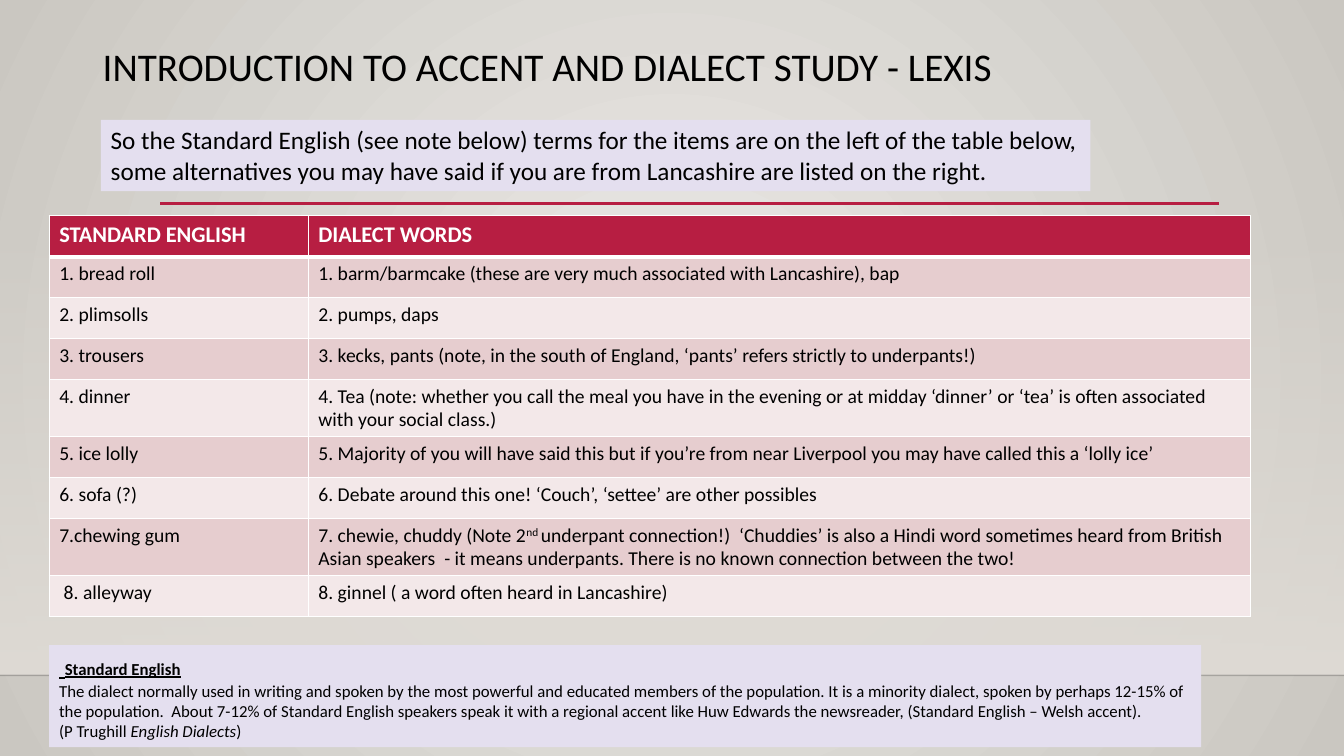
from dataclasses import dataclass

from lxml.etree import SubElement
from pptx import Presentation
from pptx.dml.color import RGBColor
from pptx.enum.shapes import MSO_CONNECTOR, MSO_SHAPE
from pptx.enum.text import MSO_ANCHOR, PP_ALIGN
from pptx.oxml import parse_xml
from pptx.oxml.ns import nsdecls, qn
from pptx.util import Cm, Pt


@dataclass(frozen=True)
class Theme:
    font: str = "Calibri"
    ink: str = "000000"
    white: str = "FFFFFF"
    accent: str = "B71E42"
    panel: str = "E4DFEF"
    bands: tuple = ("E6CDCF", "F3E8E9")
    glow: tuple = ("ECEAE7", "CAC7C1")
    floor: str = "DFDBD5"
    title: int = 28
    lead: int = 18
    header: int = 16
    body: int = 14
    note: int = 12


THEME = Theme()

TITLE = "INTRODUCTION TO ACCENT AND DIALECT STUDY - LEXIS"
INTRO = ("So the Standard English (see note below) terms for the items are on the left of the "
         "table below, some alternatives you may have said if you are from Lancashire are "
         "listed on the right.")
HEADINGS = ("STANDARD ENGLISH", "DIALECT WORDS")
WORDS = [
    ("1. bread roll", "1. barm/barmcake (these are very much associated with Lancashire), bap"),
    ("2. plimsolls", "2. pumps, daps"),
    ("3. trousers", "3. kecks, pants (note, in the south of England, ‘pants’ refers strictly to "
                    "underpants!)"),
    ("4. dinner", "4. Tea (note: whether you call the meal you have in the evening or at midday "
                  "‘dinner’ or ‘tea’ is often associated with your social class.)"),
    ("5. ice lolly", "5. Majority of you will have said this but if you’re from near Liverpool "
                     "you may have called this a ‘lolly ice’"),
    ("6. sofa (?)", "6. Debate around this one! ‘Couch’, ‘settee’ are other possibles"),
    ("7.chewing gum", [
        ("7. chewie, chuddy (Note 2", {}),
        ("nd ", {"baseline": 30000}),
        ("underpant connection!)  ‘Chuddies’ is also a Hindi word sometimes heard from British "
         "Asian speakers  - it means underpants. There is no known connection between the "
         "two!", {})]),
    (" 8. alleyway", "8. ginnel ( a word often heard in Lancashire)"),
]
HEADING_STYLE = {"bold": True, "underline": True}
NOTE = [
    [(" ", {**HEADING_STYLE, "size": Pt(THEME.lead)}), ("Standard English", HEADING_STYLE)],
    "The dialect normally used in writing and spoken by the most powerful and educated members "
    "of the population. It is a minority dialect, spoken by perhaps 12-15% of the population.  "
    "About 7-12% of Standard English speakers speak it with a regional accent like Huw Edwards "
    "the newsreader, (Standard English – Welsh accent).",
    [("(P Trughill ", {}), ("English Dialects", {"italic": True}), (")", {})],
]


def paint(target, color):
    target.solid()
    target.fore_color.rgb = RGBColor.from_string(color)


def gradient(stops, direction):
    """Build a gradient fill from (position, colour, opacity) stops, all in percent."""
    marks = "".join(
        f'<a:gs pos="{position * 1000}"><a:srgbClr val="{color}">'
        f'<a:alpha val="{opacity * 1000}"/></a:srgbClr></a:gs>'
        for position, color, opacity in stops)
    return parse_xml(f'<a:gradFill {nsdecls("a")} rotWithShape="1"><a:gsLst>{marks}</a:gsLst>'
                     f'{direction}</a:gradFill>')


class SlideBuilder:
    def __init__(self, page, theme):
        self.page = page
        self.theme = theme

    def background(self):
        self.page.background.fill.gradient()
        fill = self.page.element.find(".//" + qn("a:gradFill"))
        inner, outer = self.theme.glow
        fill.getparent().replace(fill, gradient(
            [(0, inner, 100), (100, outer, 100)],
            '<a:path path="circle"><a:fillToRect l="50000" t="50000" r="50000" b="50000"/>'
            '</a:path>'))

    def panel(self, left, top, width, height, color):
        box = self.page.shapes.add_shape(
            MSO_SHAPE.RECTANGLE, Cm(left), Cm(top), Cm(width), Cm(height))
        box.shadow.inherit = False
        box.line.fill.background()
        paint(box.fill, color)
        return box

    def fade(self, left, top, width, height, color):
        box = self.panel(left, top, width, height, color)
        solid = box.element.spPr.find(qn("a:solidFill"))
        solid.getparent().replace(solid, gradient(
            [(0, color, 0), (100, color, 100)], '<a:lin ang="5400000" scaled="0"/>'))

    def rule(self, left, right, top, color, weight, opacity=100):
        line = self.page.shapes.add_connector(
            MSO_CONNECTOR.STRAIGHT, Cm(left), Cm(top), Cm(right), Cm(top))
        line.line.width = Pt(weight)
        paint(line.line.fill, color)
        properties = line.element.spPr
        shade = properties.find(".//" + qn("a:srgbClr"))
        SubElement(shade, qn("a:alpha"), val=str(opacity * 1000))
        SubElement(properties, qn("a:effectLst"))

    def put_text(self, frame, paragraphs, size, color=None, **style):
        """Fill a frame; each paragraph is a string or a list of (text, format) spans."""
        frame.word_wrap = True
        for index, spans in enumerate(paragraphs):
            para = frame.add_paragraph() if index else frame.paragraphs[0]
            para.alignment = PP_ALIGN.LEFT
            for text, extra in [(spans, {})] if isinstance(spans, str) else spans:
                span = para.add_run()
                span.text = text
                values = {"name": self.theme.font, "size": Pt(size), **style, **extra}
                baseline = values.pop("baseline", None)
                for name, value in values.items():
                    setattr(span.font, name, value)
                span.font.color.rgb = RGBColor.from_string(color or self.theme.ink)
                if baseline:
                    span.font._element.set("baseline", str(baseline))

    def title(self, text, left, top, width, height):
        box = self.page.shapes.add_textbox(Cm(left), Cm(top), Cm(width), Cm(height))
        box.text_frame.vertical_anchor = MSO_ANCHOR.MIDDLE
        self.put_text(box.text_frame, [text], self.theme.title)
        box.text_frame.paragraphs[0].line_spacing = 0.9

    def text_panel(self, paragraphs, size, left, top, width, height):
        box = self.panel(left, top, width, height, self.theme.panel)
        box.text_frame.vertical_anchor = MSO_ANCHOR.TOP
        self.put_text(box.text_frame, paragraphs, size)

    def borders(self, cell, **weights):
        properties = cell._tc.get_or_add_tcPr()
        for side in "LRTB":
            line = SubElement(properties, qn(f"a:ln{side}"), w=str(Pt(weights.get(side, 1))))
            fill = SubElement(line, qn("a:solidFill"))
            SubElement(fill, qn("a:srgbClr"), val=self.theme.white)

    def table(self, headings, rows, left, top, widths, row_height):
        theme = self.theme
        table = self.page.shapes.add_table(
            len(rows) + 1, len(widths), Cm(left), Cm(top), Cm(sum(widths)),
            Cm(row_height * (len(rows) + 1))).table
        for column, width in zip(table.columns, widths):
            column.width = Cm(width)
        for index, texts in enumerate([headings, *rows]):
            table.rows[index].height = Cm(row_height)
            for cell, text in zip(table.rows[index].cells, texts):
                self.borders(cell, B=1 if index else 3, T=3 if index == 1 else 1)
                if index:
                    paint(cell.fill, theme.bands[(index - 1) % 2])
                    self.put_text(cell.text_frame, [text], theme.body, bold=False)
                else:
                    paint(cell.fill, theme.accent)
                    self.put_text(cell.text_frame, [text], theme.header, theme.white, bold=True)


def main():
    deck = Presentation()
    deck.slide_width, deck.slide_height = Cm(33.87), Cm(19.05)
    slide = SlideBuilder(deck.slides.add_slide(deck.slide_layouts[6]), THEME)
    slide.background()
    slide.fade(0, 5.61, 33.87, 11.4, THEME.floor)
    slide.rule(0, 33.87, 17.02, THEME.ink, 1, opacity=20)
    slide.rule(4.04, 30.73, 5.13, THEME.accent, 2.5)
    slide.title(TITLE, 2.34, 1.02, 29.21, 1.42)
    slide.text_panel([INTRO], THEME.lead, 2.54, 3.02, 24.94, 1.8)
    slide.text_panel(NOTE, THEME.note, 1.24, 16.26, 29.03, 2.57)
    slide.table(HEADINGS, WORDS, 1.24, 5.44, (6.53, 23.75), 1.03)
    deck.save("out.pptx")


if __name__ == "__main__":
    main()
